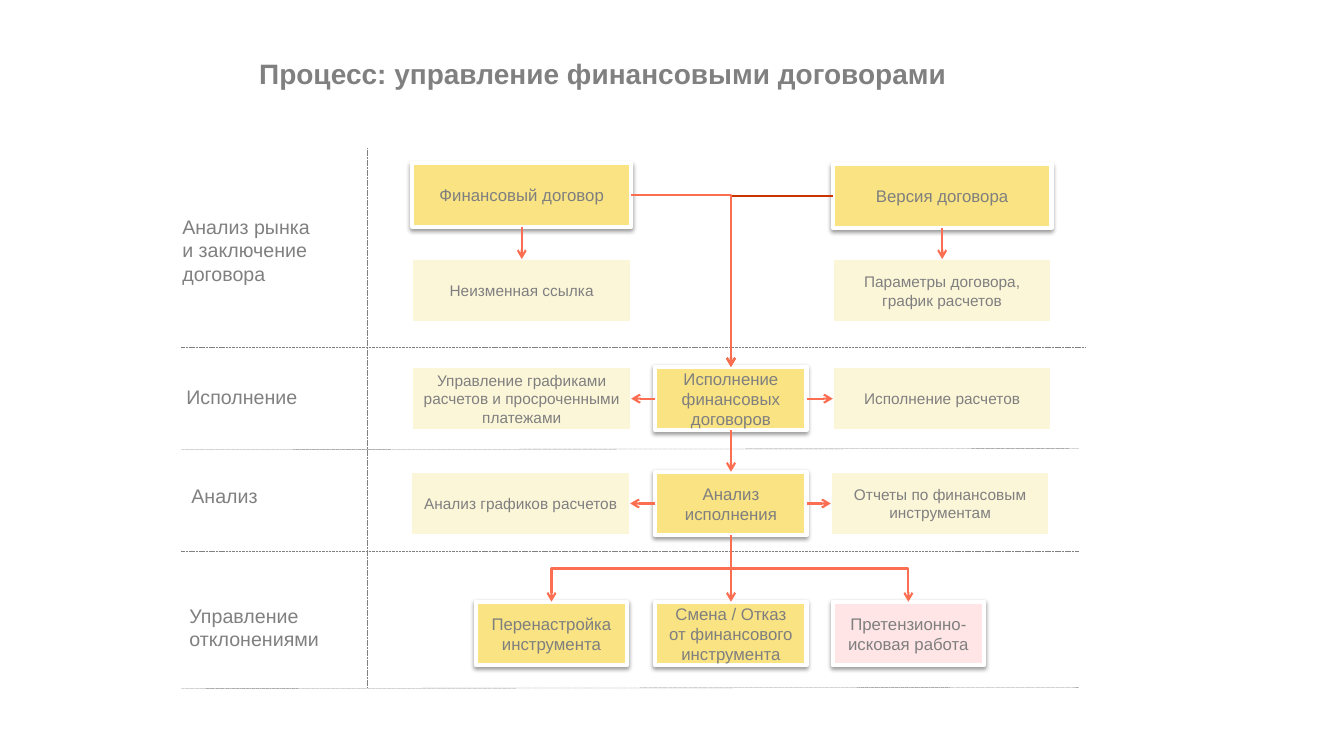
import pptx
import pptx.util
import pptx.dml.color
import pptx.enum.dml
import pptx.enum.shapes
import pptx.enum.text
import pptx.oxml.ns
from lxml import etree

PX = 9144
SLIDE = (1333, 750)
FONT = "Arial"
GRAY, TEXT_GRAY = "808080", "7F7F7F"
CORAL, RED, WHITE = "FC6E51", "CC3300", "FFFFFF"
YELLOW, CREAM, PINK = "F9E383", "FBEEB5", "FFE5E5"
WIDE, NARROW, HEIGHT = 217, 150, 63
TOP, BOTTOM, LEFT, RIGHT = 0, 2, 1, 3

TITLE = ("Процесс: управление финансовыми договорами", (247, 17, 703, 118))
STAGES = [
    (["Анализ рынка", "и заключение", "договора"], (171, 208, 155, 81), False),
    (["Исполнение"], (175, 377, 131, 34), False),
    (["Анализ"], (180, 475, 86, 34), False),
    (["Управление отклонениями"], (178, 594, 186, 57), True),
]
DIVIDERS = [
    (180, 344, 1076, 344),
    (180, 446, 1070, 445),
    (180, 547, 1070, 547),
    (180, 683, 1070, 682),
    (364, 147, 364, 682),
]
STEPS = {
    "contract": ("Финансовый договор", 409, 162, WIDE, YELLOW),
    "version": ("Версия договора", 826, 163, WIDE, YELLOW),
    "execution": ("Исполнение финансовых договоров", 650, 364, NARROW, YELLOW),
    "analysis": ("Анализ исполнения", 650, 468, NARROW, YELLOW),
    "retuning": ("Перенастройка инструмента", 472, 597, NARROW, YELLOW),
    "change": ("Смена / Отказ от финансового инструмента", 650, 597, NARROW, YELLOW),
    "claims": ("Претензионно-исковая работа", 826, 597, NARROW, PINK),
}
DETAILS = {
    "reference": ("Неизменная ссылка", 409, 257, WIDE, CREAM),
    "parameters": ("Параметры договора, график расчетов", 826, 257, WIDE, CREAM),
    "schedules": ("Управление графиками расчетов и просроченными платежами", 409, 364, WIDE, CREAM),
    "payments": ("Исполнение расчетов", 826, 364, WIDE, CREAM),
    "schedule_analysis": ("Анализ графиков расчетов", 408, 468, WIDE, CREAM),
    "reports": ("Отчеты по финансовым инструментам", 824, 468, WIDE, CREAM),
}
STRAIGHT_FLOWS = [
    ("contract", BOTTOM, "reference", TOP),
    ("version", BOTTOM, "parameters", TOP),
    ("execution", LEFT, "schedules", RIGHT),
    ("execution", RIGHT, "payments", LEFT),
    ("execution", BOTTOM, "analysis", TOP),
    ("analysis", LEFT, "schedule_analysis", RIGHT),
    ("analysis", RIGHT, "reports", LEFT),
    ("analysis", BOTTOM, "change", TOP),
]
CORNER_FLOWS = [
    ("version", LEFT, "execution", TOP, RED),
    ("contract", RIGHT, "execution", TOP, CORAL),
]
BRANCHES = [("analysis", "retuning"), ("analysis", "claims")]


def px(*lengths):
    return [round(length * PX) for length in lengths]


def color(value):
    return pptx.dml.color.RGBColor.from_string(value)


def child(parent, tag, **attributes):
    return etree.SubElement(parent, pptx.oxml.ns.qn(tag), attributes)


def add_text(paragraph, words, size, ink, bold=False):
    run = paragraph.add_run()
    run.text = words
    run.font.name = FONT
    run.font.size = pptx.util.Pt(size)
    run.font.bold = bold
    run.font.color.rgb = color(ink)


def add_box(step, is_main):
    words, left, top, width, fill = step
    box = slide.shapes.add_shape(
        pptx.enum.shapes.MSO_SHAPE.RECTANGLE, *px(left, top, width, HEIGHT))
    box.shadow.inherit = False
    box.fill.solid()
    box.fill.fore_color.rgb = color(fill)
    box.line.color.rgb = color(WHITE)
    box.line.width = pptx.util.Pt(3 if is_main else 1.5)
    if is_main:
        effects = box.element.spPr.find(pptx.oxml.ns.qn("a:effectLst"))
        shadow = child(effects, "a:outerShdw", blurRad="39370", dist="20320",
                       dir="5400000", rotWithShape="0")
        child(child(shadow, "a:srgbClr", val="000000"), "a:alpha", val="38000")
    else:
        fill_color = box.element.spPr.find(".//" + pptx.oxml.ns.qn("a:srgbClr"))
        child(fill_color, "a:alpha", val="50000")
    frame = box.text_frame
    frame.word_wrap = True
    frame.vertical_anchor = pptx.enum.text.MSO_ANCHOR.MIDDLE
    frame.paragraphs[0].alignment = pptx.enum.text.PP_ALIGN.CENTER
    add_text(frame.paragraphs[0], words, 12 if is_main else 11, TEXT_GRAY)
    return box


def side_middle(box, side):
    x_share, y_share = [(0.5, 0), (0, 0.5), (0.5, 1), (1, 0.5)][side]
    return (round(box.left + box.width * x_share),
            round(box.top + box.height * y_share))


def add_line(kind, ends, ink, width, arrow=True):
    line = slide.shapes.add_connector(kind, *ends)
    line.line.color.rgb = color(ink)
    line.line.width = pptx.util.Pt(width)
    if arrow:
        child(line.line._get_or_add_ln(), "a:tailEnd", type="arrow")
    else:
        line.line.dash_style = pptx.enum.dml.MSO_LINE.SQUARE_DOT
    child(line.element.spPr, "a:effectLst")
    return line


def add_flow(kind, start, start_side, finish, finish_side, ink):
    source, target = boxes[start], boxes[finish]
    ends = side_middle(source, start_side) + side_middle(target, finish_side)
    flow = add_line(kind, ends, ink, 1.5)
    flow.begin_connect(source, start_side)
    flow.end_connect(target, finish_side)
    return flow


def add_branch(start, finish):
    x1, y1 = side_middle(boxes[start], BOTTOM)
    x2, y2 = side_middle(boxes[finish], TOP)
    center_x, center_y = (x1 + x2) // 2, (y1 + y2) // 2
    half_drop, half_span = (y2 - y1) // 2, abs(x2 - x1) // 2
    turn = 1 if x2 < x1 else -1
    ends = (center_x - turn * half_drop, center_y - half_span,
            center_x + turn * half_drop, center_y + half_span)
    branch = add_line(ELBOW, ends, CORAL, 1.5)
    branch.element.spPr.xfrm.set("rot", str(5400000 if turn > 0 else 16200000))


STRAIGHT = pptx.enum.shapes.MSO_CONNECTOR.STRAIGHT
ELBOW = pptx.enum.shapes.MSO_CONNECTOR.ELBOW

deck = pptx.Presentation()
deck.slide_width, deck.slide_height = px(*SLIDE)
slide = deck.slides.add_slide(deck.slide_layouts[5])

heading = slide.shapes.title
heading.left, heading.top, heading.width, heading.height = px(*TITLE[1])
heading.text_frame.word_wrap = True
heading.text_frame.auto_size = pptx.enum.text.MSO_AUTO_SIZE.NONE
heading.text_frame.vertical_anchor = pptx.enum.text.MSO_ANCHOR.MIDDLE
heading_line = heading.text_frame.paragraphs[0]
heading_line.alignment = pptx.enum.text.PP_ALIGN.LEFT
heading_line.line_spacing = 0.8
add_text(heading_line, TITLE[0], 20, GRAY, True)

for divider in DIVIDERS:
    add_line(STRAIGHT, px(*divider), GRAY, 0.25, arrow=False)

for stage_lines, place, wraps in STAGES:
    stage = slide.shapes.add_textbox(*px(*place)).text_frame
    stage.word_wrap = wraps
    stage.auto_size = pptx.enum.text.MSO_AUTO_SIZE.SHAPE_TO_FIT_TEXT
    for index, words in enumerate(stage_lines):
        paragraph = stage.add_paragraph() if index else stage.paragraphs[0]
        add_text(paragraph, words, 14, GRAY)

boxes = {key: add_box(step, True) for key, step in STEPS.items()}
boxes.update({key: add_box(detail, False) for key, detail in DETAILS.items()})

for corner in CORNER_FLOWS:
    bend = add_flow(ELBOW, *corner)
    bend.element.spPr.find(pptx.oxml.ns.qn("a:prstGeom")).set("prst", "bentConnector2")
for straight_flow in STRAIGHT_FLOWS:
    add_flow(STRAIGHT, *straight_flow, CORAL)
for branch_ends in BRANCHES:
    add_branch(*branch_ends)

deck.save("out.pptx")
